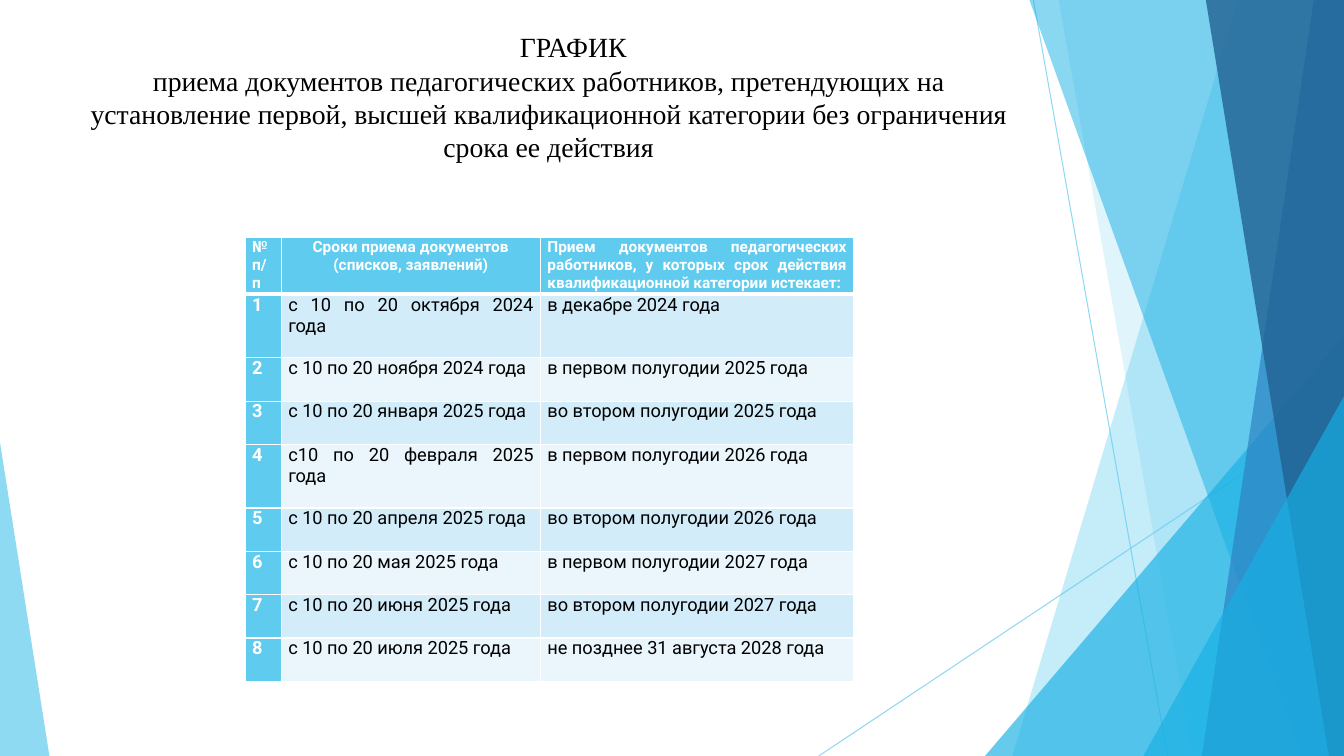
from dataclasses import dataclass

from lxml.etree import SubElement
from pptx import Presentation
from pptx.dml.color import RGBColor
from pptx.enum.shapes import MSO_CONNECTOR, MSO_SHAPE
from pptx.enum.text import MSO_ANCHOR, MSO_AUTO_SIZE, PP_ALIGN as Align
from pptx.oxml.ns import qn
from pptx.slide import Slide
from pptx.table import _Cell as Cell
from pptx.util import Inches, Pt

WIDTH, HEIGHT = 13.33, 7.5
SKY, AZURE, BLUE, NAVY = "5FCBEF", "17B0E4", "2E83C3", "226292"
WHITE, BLACK = "FFFFFF", "000000"
BAND_FILLS = ("D2ECF9", "EAF6FC")


@dataclass(frozen=True)
class Ray:
    start: tuple[float, float]
    end: tuple[float, float]


@dataclass(frozen=True)
class Shard:
    """A pane on the right edge, with its slanted left side from top to bottom."""
    top_x: float
    bottom_x: float
    color: str
    opacity: int


@dataclass(frozen=True)
class Corner:
    """A right-angled triangle standing on the bottom edge."""
    left: float
    top: float
    width: float
    apex: float
    color: str
    opacity: int


@dataclass(frozen=True)
class Period:
    submission: str
    expiry: str
    height: float = 0.43


DECORATION = (
    Ray((10.25, 0), (11.58, HEIGHT)),
    Ray((WIDTH, 4.03), (8.12, HEIGHT)),
    Shard(12.28, 10.04, SKY, 36),
    Shard(10.5, 11.83, SKY, 20),
    Corner(9.77, 3.33, 3.56, 1, AZURE, 66),
    Shard(10.21, 12.91, AZURE, 50),
    Shard(13.03, 11.92, BLUE, 70),
    Shard(11.96, 13.18, NAVY, 80),
    Corner(11.34, 3.93, 1.99, 1, AZURE, 66),
    Corner(0, 4.39, 0.49, 0, SKY, 70),
)
TITLE = (
    "ГРАФИК\vприема документов педагогических работников, претендующих на "
    "установление первой, высшей квалификационной категории без ограничения "
    "срока ее действия"
)
COLUMN_WIDTHS = (0.36, 2.57, 3.11)
HEADER_HEIGHT = 0.56
HEADERS = (
    ("№ п/п", Align.JUSTIFY),
    ("Сроки приема документов\n(списков, заявлений)", Align.CENTER),
    ("Прием документов педагогических работников, у которых срок действия "
     "квалификационной категории истекает:", Align.JUSTIFY),
)
PERIODS = (
    Period("с 10 по 20 октября 2024 года", "в декабре 2024 года", 0.63),
    Period("с 10 по 20 ноября 2024 года", "в первом полугодии 2025 года"),
    Period("с 10 по 20 января 2025 года", "во втором полугодии 2025 года"),
    Period("с10 по 20 февраля 2025 года", "в первом полугодии 2026 года", 0.63),
    Period("с 10 по 20 апреля 2025 года", "во втором полугодии 2026 года"),
    Period("с 10 по 20 мая 2025 года", "в первом полугодии 2027 года"),
    Period("с 10 по 20 июня 2025 года", "во втором полугодии 2027 года"),
    Period("с 10 по 20 июля 2025 года", "не позднее 31 августа 2028 года"),
)


def rgb(color: str) -> RGBColor:
    return RGBColor.from_string(color)


def set_attributes(target, values: dict) -> None:
    for name, value in values.items():
        setattr(target, name, value)


def set_opacity(shape, percent: int) -> None:
    for color in shape._element.spPr.iter(qn("a:srgbClr")):
        SubElement(color, qn("a:alpha"), val=str(percent * 1000))


def draw_ray(slide: Slide, ray: Ray) -> None:
    points = [Inches(value) for value in ray.start + ray.end]
    line = slide.shapes.add_connector(MSO_CONNECTOR.STRAIGHT, *points)
    line.line.color.rgb = rgb(SKY)
    line.line.width = Pt(0.75)
    set_opacity(line, 70)
    SubElement(line._element.spPr, qn("a:effectLst"))


def draw_pane(slide: Slide, pane: Shard | Corner) -> None:
    if isinstance(pane, Shard):
        builder = slide.shapes.build_freeform(Inches(pane.top_x), 0, scale=1.0)
        outline = ((WIDTH, 0), (WIDTH, HEIGHT), (pane.bottom_x, HEIGHT))
        builder.add_line_segments([(Inches(x), Inches(y)) for x, y in outline])
        shape = builder.convert_to_shape()
    else:
        shape = slide.shapes.add_shape(
            MSO_SHAPE.ISOSCELES_TRIANGLE, Inches(pane.left), Inches(pane.top),
            Inches(pane.width), Inches(HEIGHT - pane.top))
        shape.adjustments[0] = pane.apex
    shape.shadow.inherit = False
    shape.fill.solid()
    shape.fill.fore_color.rgb = rgb(pane.color)
    shape.line.fill.background()
    set_opacity(shape, pane.opacity)


def draw_title(slide: Slide) -> None:
    title = slide.shapes.title
    set_attributes(title, {"left": Inches(0.74), "top": Inches(0.25),
                           "width": Inches(9.4), "height": Inches(1.49)})
    frame = title.text_frame
    frame.text = TITLE
    set_attributes(frame, {"word_wrap": True, "auto_size": MSO_AUTO_SIZE.NONE,
                           "vertical_anchor": MSO_ANCHOR.TOP})
    paragraph = frame.paragraphs[0]
    paragraph.alignment = Align.CENTER
    paragraph._p.get_or_add_pPr().set("indent", str(Inches(0.49)))
    for run in paragraph.runs:
        set_attributes(run.font, {"name": "Times New Roman", "size": Pt(19.8)})
        run.font.color.rgb = rgb(BLACK)


def add_borders(cell: Cell, bottom_width: float) -> None:
    """Put white lines around a cell, ahead of its fill as the schema asks."""
    properties = cell._tc.get_or_add_tcPr()
    widths = {"lnL": 1, "lnR": 1, "lnT": 1, "lnB": bottom_width}
    for position, (tag, width) in enumerate(widths.items()):
        border = SubElement(properties, qn(f"a:{tag}"), w=str(Pt(width)))
        fill = SubElement(border, qn("a:solidFill"))
        SubElement(fill, qn("a:srgbClr"), val=WHITE)
        properties.insert(position, border)


def fill_cell(cell: Cell, text: str, fill: str, size: float = 13,
              align: Align = Align.JUSTIFY, bottom_width: float = 1) -> None:
    cell.text = text
    set_attributes(cell, {"margin_left": Inches(0.07), "margin_right": Inches(0.07),
                          "margin_top": 0, "margin_bottom": 0})
    cell.fill.solid()
    cell.fill.fore_color.rgb = rgb(fill)
    add_borders(cell, bottom_width)
    strong = fill == SKY
    for paragraph in cell.text_frame.paragraphs:
        paragraph.alignment = align
        for run in paragraph.runs:
            set_attributes(run.font, {"name": "Roboto", "size": Pt(size), "bold": strong})
            run.font.color.rgb = rgb(WHITE if strong else BLACK)


def draw_schedule(slide: Slide) -> None:
    heights = [HEADER_HEIGHT] + [period.height for period in PERIODS]
    table = slide.shapes.add_table(
        len(heights), len(COLUMN_WIDTHS), Inches(2.43), Inches(2.36),
        Inches(sum(COLUMN_WIDTHS)), Inches(sum(heights))).table
    for column, width in zip(table.columns, COLUMN_WIDTHS):
        column.width = Inches(width)
    for row, height in zip(table.rows, heights):
        row.height = Inches(height)
    for column, (text, align) in enumerate(HEADERS):
        fill_cell(table.cell(0, column), text, SKY, 11, align, 3)
    for number, period in enumerate(PERIODS, 1):
        band = BAND_FILLS[(number - 1) % 2]
        fill_cell(table.cell(number, 0), str(number), SKY)
        fill_cell(table.cell(number, 1), period.submission, band)
        fill_cell(table.cell(number, 2), period.expiry, band)


def main() -> None:
    presentation = Presentation()
    set_attributes(presentation, {"slide_width": Inches(WIDTH), "slide_height": Inches(HEIGHT)})
    slide = presentation.slides.add_slide(presentation.slide_layouts[5])
    for item in DECORATION:
        draw = draw_ray if isinstance(item, Ray) else draw_pane
        draw(slide, item)
    draw_title(slide)
    draw_schedule(slide)
    presentation.save("out.pptx")


if __name__ == "__main__":
    main()
